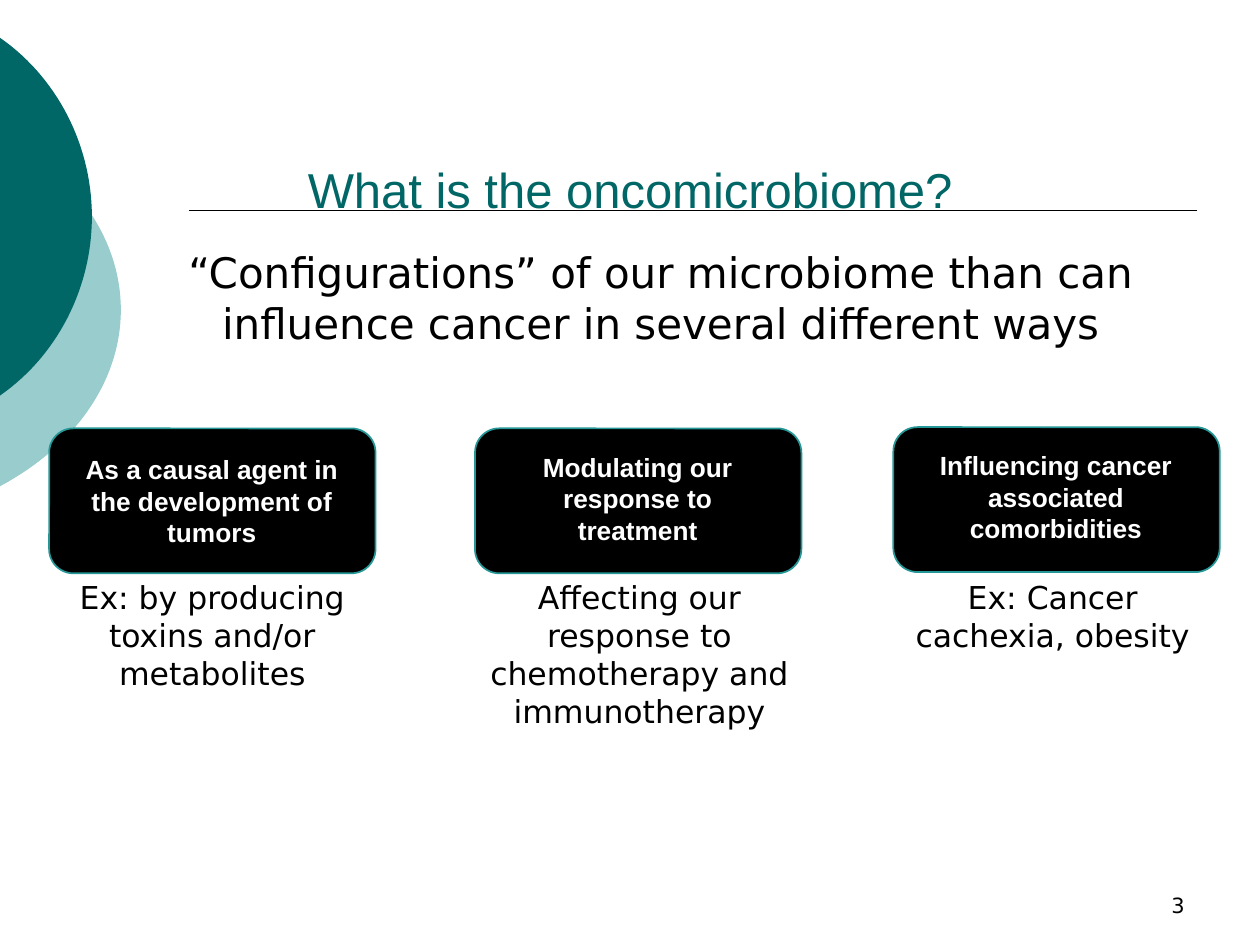
from lxml import etree
from pptx import Presentation
from pptx.dml.color import RGBColor
from pptx.enum.shapes import MSO_CONNECTOR, MSO_SHAPE
from pptx.enum.text import MSO_ANCHOR, PP_ALIGN
from pptx.oxml.ns import qn
from pptx.util import Inches, Pt

STRAIGHT = MSO_CONNECTOR.STRAIGHT
ROUNDED = MSO_SHAPE.ROUNDED_RECTANGLE
TOP, BOTTOM = MSO_ANCHOR.TOP, MSO_ANCHOR.BOTTOM
CENTER, RIGHT = PP_ALIGN.CENTER, PP_ALIGN.RIGHT

WIDTH, HEIGHT = 10, 7.5
BLACK, WHITE, TEAL, PALE_TEAL, EDGE = "000000", "FFFFFF", "006666", "99CCCC", "269797"
TITLE = {"name": "Arial", "size": Pt(28)}
BODY = {"name": "DejaVu Sans", "size": Pt(24)}
LABEL = {"name": "Arial", "size": Pt(15), "bold": True}
CAPTION = {"name": "DejaVu Sans", "size": Pt(18)}
NUMBER = {"name": "DejaVu Sans", "size": Pt(12)}

CARD_WIDTH, CARD_HEIGHT = 2.59, 1.15
# Card left, card top, label drop, caption left, caption height, label, caption
WAYS = [
    (0.39, 3.4, 0.15, 0.39, 1.01, "As a causal agent in the development of tumors",
     "Ex: by producing toxins and/or metabolites"),
    (3.77, 3.4, 0.13, 3.78, 1.31, "Modulating our response to treatment",
     "Affecting our response to chemotherapy and immunotherapy"),
    (7.09, 3.39, 0.13, 7.06, 0.71, "Influencing cancer associated comorbidities",
     "Ex: Cancer cachexia, obesity"),
]


def color(code):
    return RGBColor.from_string(code)


def add_text(page, box, text, style, ink=BLACK, align=CENTER, anchor=TOP, inset=0.1):
    frame = page.shapes.add_textbox(*map(Inches, box)).text_frame
    frame.word_wrap = True
    frame.vertical_anchor = anchor
    frame.margin_left = frame.margin_right = Inches(inset)
    para = frame.paragraphs[0]
    para.alignment = align
    span = para.add_run()
    span.text = text
    for key, value in style.items():
        setattr(span.font, key, value)
    span.font.color.rgb = color(ink)


def add_disc(page, curve, fill, steps=30):
    """Draw a disc cut by the left slide edge; curve runs from its top to its tip."""
    upper = []
    for step in range(steps + 1):
        t = step / steps
        weights = ((1 - t) ** 3, 3 * t * (1 - t) ** 2, 3 * t * t * (1 - t), t ** 3)
        upper.append(tuple(sum(w * point[axis] for w, point in zip(weights, curve))
                           for axis in (0, 1)))
    middle = curve[-1][1]
    lower = [(x, 2 * middle - y) for x, y in reversed(upper[:-1])]
    outline = [(Inches(x), Inches(y)) for x, y in upper + lower]
    builder = page.shapes.build_freeform(*outline[0])
    builder.add_line_segments(outline[1:], close=True)
    disc = builder.convert_to_shape()
    disc.shadow.inherit = False
    disc.fill.solid()
    disc.fill.fore_color.rgb = color(fill)
    disc.line.fill.background()


def add_decoration(page):
    add_disc(page, [(0, 1.06), (0.6, 1.38), (0.96, 1.9), (0.96, 2.46)], PALE_TEAL)
    add_disc(page, [(0, 0.3), (0.46, 0.62), (0.73, 1.16), (0.73, 1.72)], TEAL)
    ends = (0.15 * WIDTH, 1.67, 0.95 * WIDTH, 1.67)
    rule = page.shapes.add_connector(STRAIGHT, *map(Inches, ends))
    rule.line.color.rgb = color(BLACK)
    rule.line.width = Pt(1)
    etree.SubElement(rule._element.spPr, qn("a:effectLst"))


def add_way(page, left, top, drop, caption_left, caption_height, label, caption):
    # Card
    card = page.shapes.add_shape(
        ROUNDED, *map(Inches, (left, top, CARD_WIDTH, CARD_HEIGHT)))
    card.shadow.inherit = False
    card.fill.solid()
    card.fill.fore_color.rgb = color(BLACK)
    card.line.color.rgb = color(EDGE)
    card.line.width = Pt(1)
    # Label on the card, caption below it
    add_text(page, (left + 0.13, top + drop, 2.32, 0.86), label, LABEL, WHITE)
    add_text(page, (caption_left, 4.54, CARD_WIDTH, caption_height), caption, CAPTION)


def main():
    deck = Presentation()
    deck.slide_width, deck.slide_height = Inches(WIDTH), Inches(HEIGHT)
    page = deck.slides.add_slide(deck.slide_layouts[6])
    add_decoration(page)
    # Statement
    add_text(page, (0.59, 1.91, 9.31, 3.44),
             "“Configurations” of our microbiome than can influence cancer "
             "in several different ways", BODY, inset=0.5)
    for way in WAYS:
        add_way(page, *way)
    # Page number and title
    add_text(page, (7.17, 6.83, 2.33, 0.5), "3", NUMBER, align=RIGHT, anchor=BOTTOM)
    add_text(page, (0.69, 0.69, 8.62, 1.09), "What is the oncomicrobiome?",
             TITLE, TEAL, anchor=BOTTOM)
    deck.save("out.pptx")


if __name__ == "__main__":
    main()
